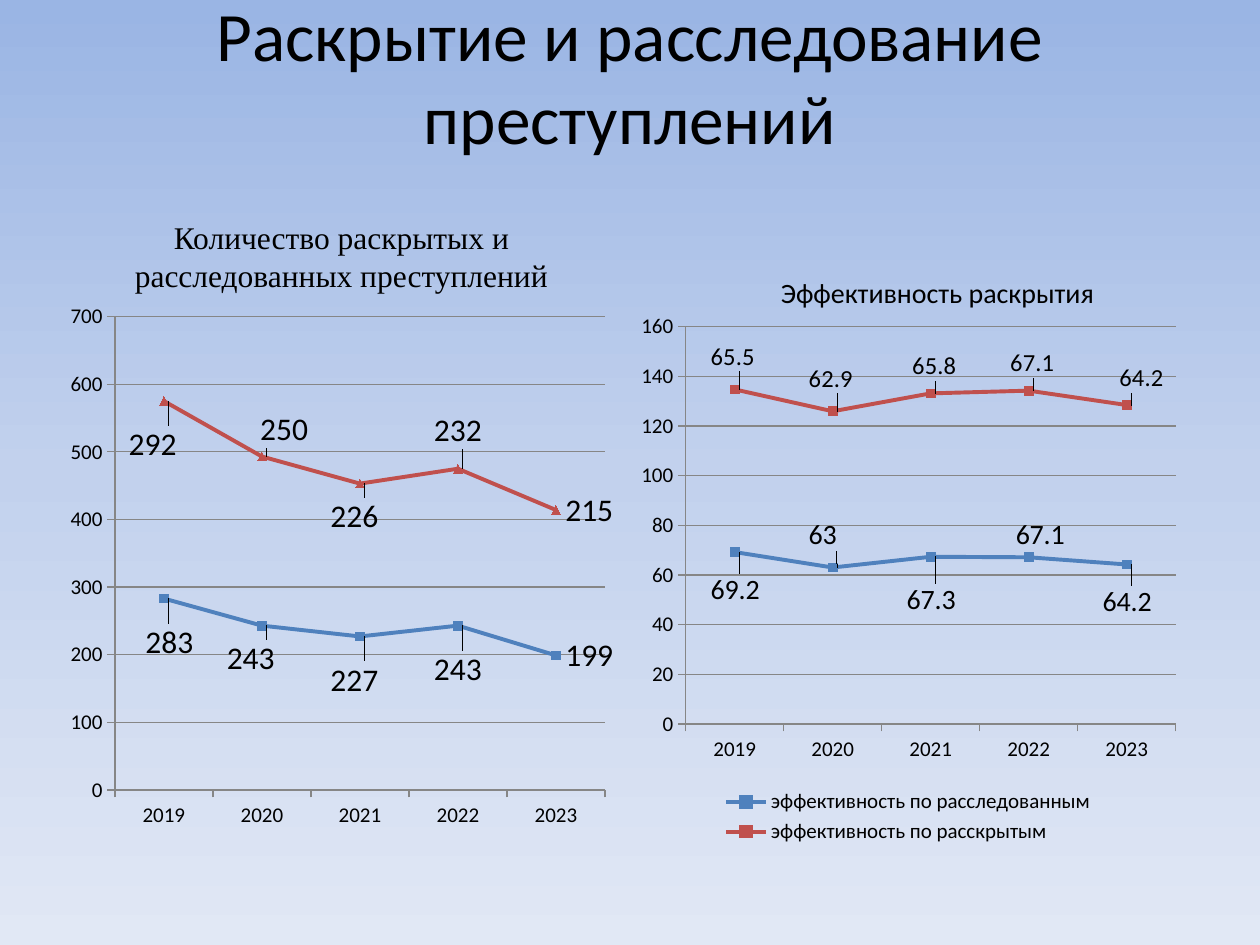
"""Build a slide with two stacked line charts on solved and investigated crimes."""
import copy

import pptx
import pptx.chart.data
import pptx.dml.color
import pptx.enum.chart
import pptx.enum.text
import pptx.oxml
import pptx.oxml.ns
import pptx.util

Inches, Pt = pptx.util.Inches, pptx.util.Pt
qn = pptx.oxml.ns.qn
xl = pptx.enum.chart

COLORS = {"text": "000000", "blue": "4F81BD", "red": "C0504D", "grid": "868686"}
BACKGROUND = [(0, "9AB5E4"), (0.5, "C2D1ED"), (1, "E1E8F5")]
YEARS = ["2019", "2020", "2021", "2022", "2023"]
TEXTS = [
    (0, "Раскрытие и расследование преступлений", (0.5, 0.3, 9, 1.25), "MIDDLE",
     {"size": Pt(39.6), "name": "Calibri", "bold": False}),
    (1, "Количество раскрытых и расследованных преступлений", (0.5, 1.68, 4.42, 0.7), "BOTTOM",
     {"size": Pt(18), "name": "Times New Roman", "bold": False}),
    (3, "Эффективность раскрытия", (5.23, 1.8, 4.42, 0.7), "BOTTOM",
     {"size": Pt(16), "name": "Calibri", "bold": False}),
]
CHARTS = [
    {"at": (0.47, 2.34, 4.42, 4.32), "plot": (0.1, 0.04, 0.88, 0.87), "legend": False,
     "top": 700, "step": 100, "series": [
         {"name": "Series 1", "vals": [283, 243, 227, 243, 199], "color": "blue",
          "marker": "SQUARE", "size": 18,
          "shifts": [(-0.05, 0.08), (-0.08, 0.06), (-0.07, 0.08), (-0.06, 0.08)]},
         {"name": "Series 2", "vals": [292, 250, 226, 232, 215], "color": "red",
          "marker": "TRIANGLE", "size": 18,
          "shifts": [(-0.08, 0.08), (-0.02, -0.05), (-0.07, 0.06), (-0.06, -0.07)]}]},
    {"at": (5, 2.42, 4.42, 4.32), "plot": (0.1, 0.04, 0.88, 0.73), "legend": True,
     "top": 160, "step": 20, "series": [
         {"name": "эффективность по расследованным", "vals": [69.2, 63, 67.3, 67.1, 64.2],
          "color": "blue", "marker": "SQUARE", "size": 16,
          "shifts": [(-0.06, 0.07), (-0.06, -0.06), (-0.06, 0.08), (-0.04, -0.04), (-0.06, 0.07)]},
         {"name": "эффективность по расскрытым", "vals": [65.5, 62.9, 65.8, 67.1, 64.2],
          "color": "red", "marker": "SQUARE", "size": 14,
          "shifts": [(-0.06, -0.06), (-0.06, -0.06), (-0.05, -0.05), (-0.05, -0.05),
                     (-0.03, -0.05)]}]},
]


def rgb(value):
    return pptx.dml.color.RGBColor.from_string(value)


def apply(target, values):
    for name, value in values.items():
        setattr(target, name, value)


def place(shape, at):
    apply(shape, dict(zip(("left", "top", "width", "height"), map(Inches, at))))


def set_font(font, size, **values):
    apply(font, {"size": Pt(size), "name": "Calibri", "bold": False, **values})
    font.color.rgb = rgb(COLORS["text"])


def layout(inner=False, **values):
    target = '<c:layoutTarget val="inner"/><c:xMode val="edge"/><c:yMode val="edge"/>' if inner else ""
    parts = "".join(f'<c:{name} val="{value}"/>' for name, value in values.items())
    return pptx.oxml.parse_xml(
        f'<c:layout {pptx.oxml.ns.nsdecls("c")}><c:manualLayout>{target}{parts}'
        "</c:manualLayout></c:layout>")


def set_background(s):
    fill = s.background.fill
    fill.gradient()
    fill.gradient_angle = 270
    stops = next(s.element.iter(qn("a:gsLst")))
    stops.append(copy.deepcopy(stops[-1]))
    for stop, (position, color) in zip(fill.gradient_stops, BACKGROUND):
        stop.position = position
        stop.color.rgb = rgb(color)


def add_text(s, idx, text, at, anchor, font):
    sp = s.placeholders[idx]
    place(sp, at)
    tf = sp.text_frame
    apply(tf, {"word_wrap": True, "auto_size": pptx.enum.text.MSO_AUTO_SIZE.NONE,
               "vertical_anchor": getattr(pptx.enum.text.MSO_ANCHOR, anchor)})
    if idx == 0:
        tf.margin_bottom = Inches(0.71)
    p = tf.paragraphs[0]
    p.alignment = pptx.enum.text.PP_ALIGN.CENTER
    r = p.add_run()
    r.text = text
    apply(r.font, font)
    r.font.color.rgb = rgb(COLORS["text"])


def format_series(series, item):
    color = rgb(COLORS[item["color"]])
    series.smooth = False
    series.format.line.width = Pt(2.25)
    series.format.line.color.rgb = color
    apply(series.marker, {"style": getattr(xl.XL_MARKER_STYLE, item["marker"]), "size": 5})
    series.marker.format.fill.solid()
    series.marker.format.fill.fore_color.rgb = color
    series.marker.format.line.color.rgb = color
    labels = series.data_labels
    apply(labels, {"show_value": True, "position": xl.XL_LABEL_POSITION.RIGHT})
    set_font(labels.font, item["size"])
    for i, (x, y) in enumerate(item["shifts"]):
        label = series.points[i].data_label
        set_font(label.font, item["size"])
        label.position = xl.XL_LABEL_POSITION.RIGHT
    for element, (x, y) in zip(labels._element.findall(qn("c:dLbl")), item["shifts"]):
        element.insert(1, layout(x=x, y=y))


def add_chart(s, spec_):
    data = pptx.chart.data.CategoryChartData()
    data.categories = YEARS
    for item in spec_["series"]:
        data.add_series(item["name"], item["vals"])
    chart = s.shapes.add_chart(xl.XL_CHART_TYPE.LINE_MARKERS_STACKED,
                               *map(Inches, spec_["at"]), data).chart
    set_font(chart.font, 18)
    apply(chart, {"has_title": False, "has_legend": spec_["legend"]})
    if spec_["legend"]:
        apply(chart.legend, {"position": xl.XL_LEGEND_POSITION.BOTTOM, "include_in_layout": False})
        set_font(chart.legend.font, 12)
    apply(chart.value_axis, {"minimum_scale": 0, "maximum_scale": spec_["top"],
                             "major_unit": spec_["step"], "has_major_gridlines": True})
    lines = [chart.value_axis.major_gridlines.format.line]
    for axis in (chart.category_axis, chart.value_axis):
        axis.major_tick_mark = xl.XL_TICK_MARK.OUTSIDE
        set_font(axis.tick_labels.font, 12)
        lines.append(axis.format.line)
    for line in lines:
        line.width = Pt(0.75)
        line.color.rgb = rgb(COLORS["grid"])
    plot = chart.plots[0]
    plot.vary_by_categories = False
    for series, item in zip(plot.series, spec_["series"]):
        format_series(series, item)
    area = next(chart.element.iter(qn("c:plotArea")))
    for old in area.findall(qn("c:layout")):
        area.remove(old)
    area.insert(0, layout(True, **dict(zip("xywh", spec_["plot"]))))


def main():
    prs = pptx.Presentation()
    prs.slide_width, prs.slide_height = Inches(10), Inches(7.5)
    s = prs.slides.add_slide(prs.slide_layouts[4])
    set_background(s)
    for text in TEXTS:
        add_text(s, *text)
    for idx in (2, 4):
        sp = s.placeholders[idx].element
        sp.getparent().remove(sp)
    for chart in CHARTS:
        add_chart(s, chart)
    prs.save("out.pptx")


if __name__ == "__main__":
    main()
